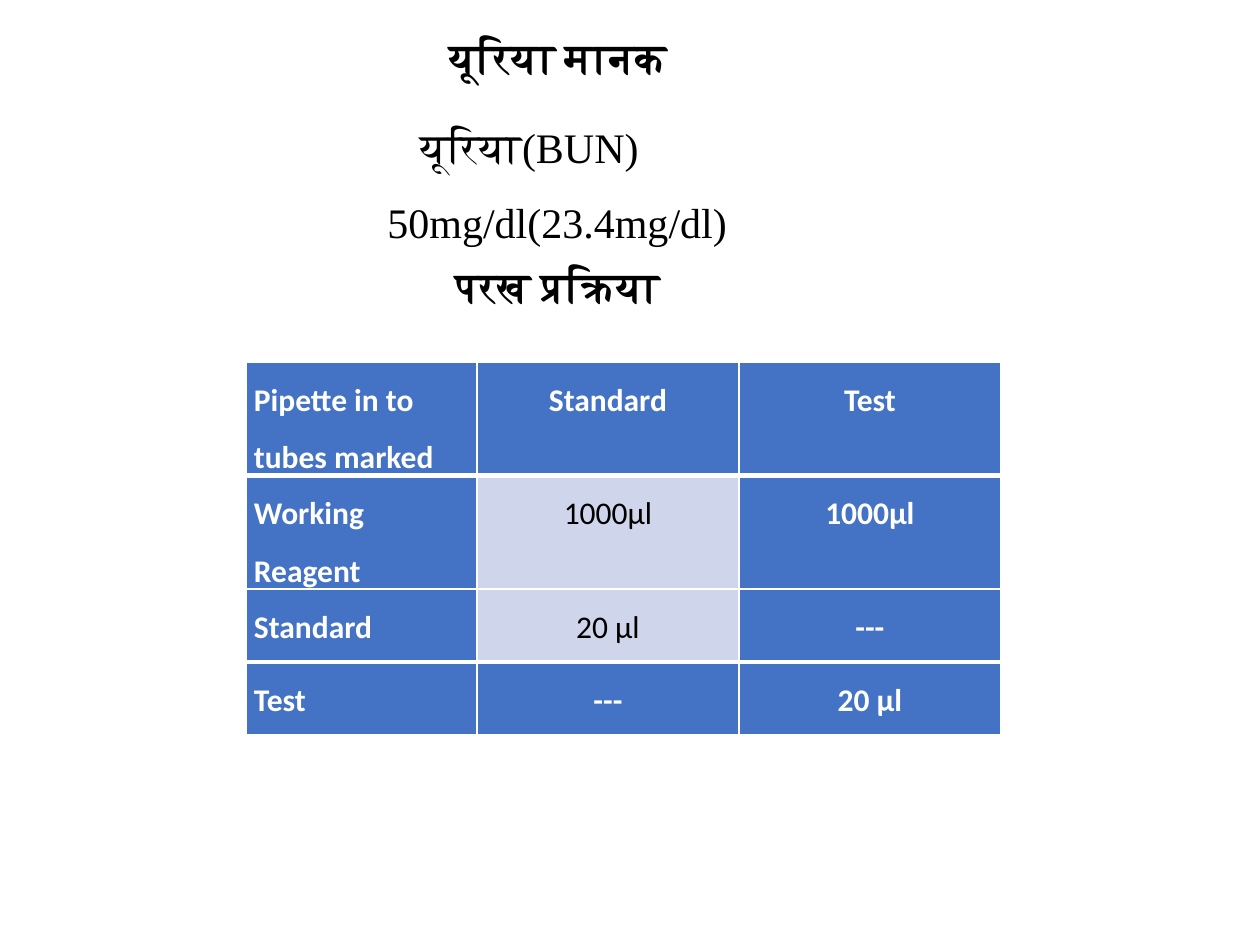
"""Build the urea standard slide with its assay table."""
from dataclasses import dataclass

from lxml.etree import SubElement
from pptx import Presentation
from pptx.dml.color import RGBColor
from pptx.enum.text import MSO_AUTO_SIZE, PP_ALIGN
from pptx.oxml.ns import qn
from pptx.util import Emu, Pt

BLACK = RGBColor(0x00, 0x00, 0x00)
WHITE = RGBColor(0xFF, 0xFF, 0xFF)
BLUE = RGBColor(0x44, 0x72, 0xC4)
PALE = RGBColor(0xCF, 0xD5, 0xEA)
SCALE = 914400 / 126
COLS = (231, 262, 262)
ROW = 73
THIN, THICK = 1, 3


@dataclass(frozen=True)
class Entry:
    text: str
    plain: bool = False


ROWS = (
    (Entry("Pipette in to tubes marked"), Entry("Standard"), Entry("Test")),
    (Entry("Working Reagent"), Entry("1000µl", plain=True), Entry("1000µl")),
    (Entry("Standard"), Entry("20 µl", plain=True), Entry("---")),
    (Entry("Test"), Entry("---"), Entry("20 µl")),
)


def px(n: int) -> Emu:
    return Emu(round(n * SCALE))


def write(para, text: str, *, size: int, face: str, color: RGBColor = BLACK,
          bold: bool = False, align=PP_ALIGN.CENTER, lines: float = 1.5,
          after: int = 8) -> None:
    para.text = text
    para.alignment = align
    para.line_spacing = lines
    para.space_before, para.space_after = Pt(0), Pt(after)
    for run in para.runs:
        font = run.font
        font.size, font.name, font.bold = Pt(size), face, bold
        font.color.rgb = color
        SubElement(font._element, qn("a:cs"), typeface=face)


def edge(cell, top: int, base: int) -> None:
    props = cell._tc.get_or_add_tcPr()
    for side, width in zip("LRTB", (THIN, THIN, top, base)):
        line = SubElement(props, qn(f"a:ln{side}"), w=str(Pt(width)))
        fill = SubElement(line, qn("a:solidFill"))
        SubElement(fill, qn("a:srgbClr"), val=str(WHITE))


def fill_cell(cell, entry: Entry, align) -> None:
    cell.margin_left = cell.margin_right = px(8)
    cell.margin_top = cell.margin_bottom = 0
    cell.fill.solid()
    cell.fill.fore_color.rgb = PALE if entry.plain else BLUE
    write(cell.text_frame.paragraphs[0], entry.text, size=18, face="Calibri",
          color=BLACK if entry.plain else WHITE, bold=not entry.plain, align=align)


def add_intro(slide) -> None:
    frame = slide.shapes.add_textbox(px(246), 0, px(624), px(321)).text_frame
    frame.word_wrap = True
    frame.auto_size = MSO_AUTO_SIZE.SHAPE_TO_FIT_TEXT
    look = {"size": 24, "face": "Times New Roman"}
    write(frame.paragraphs[0], "यूरिया मानक", bold=True, **look)
    dose = frame.add_paragraph()
    write(dose, "यूरिया(BUN)\v50mg/dl(23.4mg/dl)", align=PP_ALIGN.LEFT, **look)
    props = dose._p.get_or_add_pPr()
    props.set("marL", str(px(129)))
    props.set("indent", str(px(33)))
    write(frame.add_paragraph(), "परख प्रक्रिया", bold=True, lines=1.0, after=0, **look)


def add_assay(slide) -> None:
    table = slide.shapes.add_table(len(ROWS), len(COLS), px(246), px(362),
                                   px(sum(COLS)), px(ROW * len(ROWS))).table
    for col, width in zip(table.columns, COLS):
        col.width = px(width)
    last = len(ROWS) - 1
    rules = (THIN, THICK, *[THIN] * (last - 2), THICK, THIN)
    for r, row in enumerate(ROWS):
        for c, entry in enumerate(row):
            cell = table.cell(r, c)
            edge(cell, rules[r], rules[r + 1])
            fill_cell(cell, entry, PP_ALIGN.CENTER if c else PP_ALIGN.LEFT)


def main() -> None:
    deck = Presentation()
    deck.slide_width, deck.slide_height = px(1260), px(945)
    slide = deck.slides.add_slide(deck.slide_layouts[6])
    add_intro(slide)
    add_assay(slide)
    deck.save("out.pptx")


if __name__ == "__main__":
    main()
